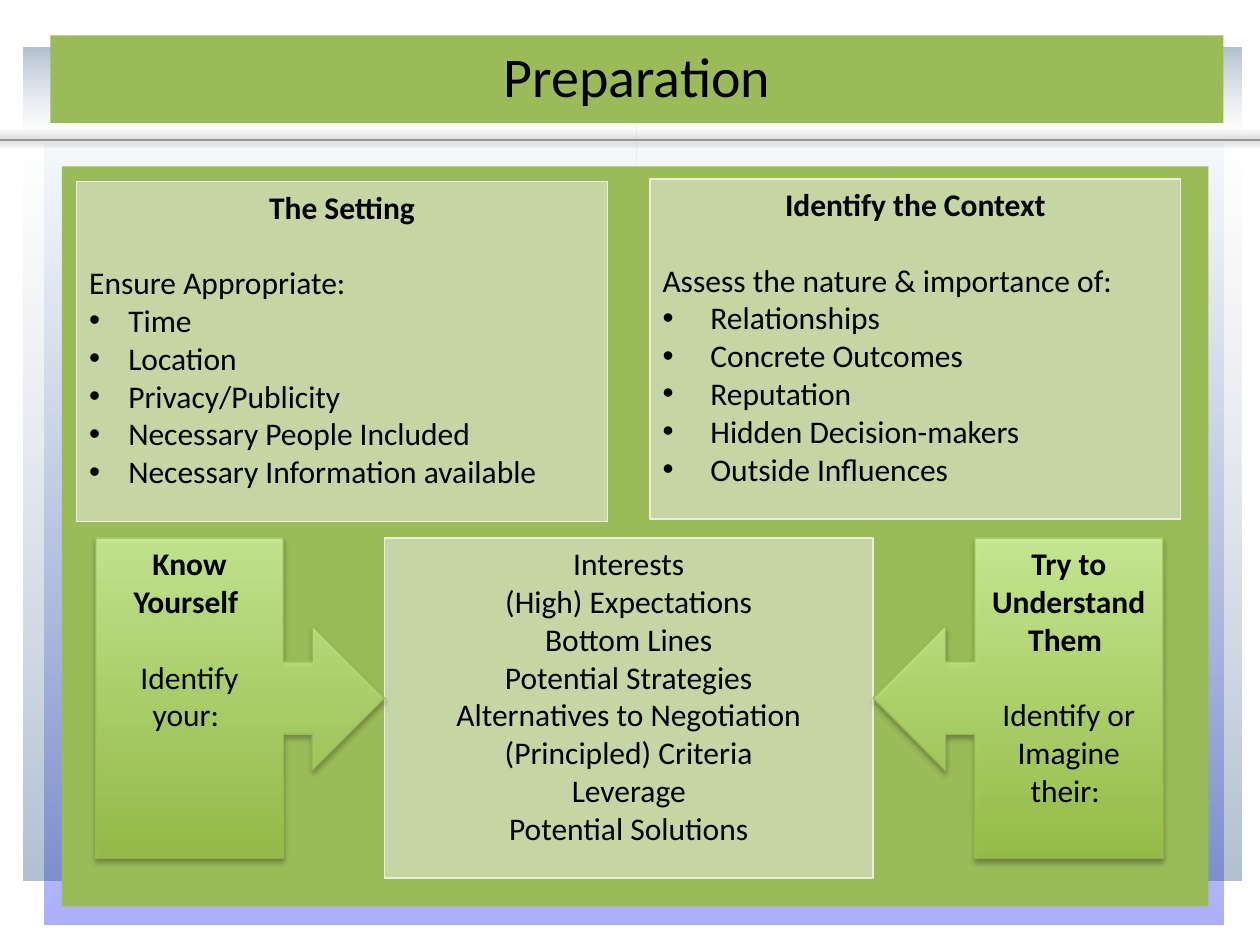
from collections import namedtuple

from lxml.etree import SubElement
from pptx import Presentation
from pptx.dml.color import RGBColor
from pptx.enum.shapes import MSO_CONNECTOR, MSO_SHAPE as Form
from pptx.enum.text import MSO_ANCHOR as Anchor, PP_ALIGN as Align
from pptx.oxml.ns import qn
from pptx.util import Emu, Pt

PX = 9144  # 100 px to the inch
FONT = "Calibri"
BLANK_LINE = 21.6  # points, one line of 18 pt text

BLACK = RGBColor(0x00, 0x00, 0x00)
GREEN = RGBColor(0x9B, 0xBB, 0x59)
LEAF = RGBColor(0xA0, 0xCA, 0x4A)
LIME = RGBColor(0xDA, 0xFF, 0xA5)
LEAF_EDGE = RGBColor(0x98, 0xB9, 0x55)
PALE = RGBColor(0xF2, 0xF2, 0xF2)
CREAM = RGBColor(0xEE, 0xEC, 0xE1)
GREY = RGBColor(0x96, 0x96, 0x96)
VIOLET = RGBColor(0x29, 0x32, 0xEF)
BLUE = RGBColor(0x4F, 0x81, 0xBD)
NAVY = RGBColor(0x1F, 0x49, 0x7D)
SLATE = RGBColor(0x7B, 0x86, 0x9F)

Box = namedtuple("Box", "left top width height")


def px(value):
    return Emu(value * PX)


def within(box, left, top, width, height):
    return Box(box.left + left, box.top + top, width, height)


def set_alpha(color_element, percent):
    SubElement(color_element, qn("a:alpha"), val=str(percent * 1000))


def add_shadow(effects, alpha, blur, distance, angle):
    shadow = SubElement(effects, qn("a:outerShdw"), blurRad=str(Pt(blur)),
                        dist=str(Pt(distance)), dir=str(angle * 60000),
                        algn="ctr", rotWithShape="0")
    set_alpha(SubElement(shadow, qn("a:srgbClr"), val=str(BLACK)), alpha)


def add_form(page, form, box, edge=None, adjust=(), rotation=0):
    shape = page.shapes.add_shape(form, *map(px, box))
    shape.shadow.inherit = False
    shape.rotation = rotation
    for index, value in enumerate(adjust):
        shape.adjustments[index] = value
    if edge is None:
        shape.line.fill.background()
    else:
        shape.line.color.rgb = edge
        shape.line.width = Pt(0.75)
    return shape


def fill_solid(shape, color, alpha=100):
    shape.fill.solid()
    shape.fill.fore_color.rgb = color
    if alpha < 100:
        fill = shape._element.spPr.find(qn("a:solidFill"))
        set_alpha(fill.find(qn("a:srgbClr")), alpha)


def fill_gradient(shape, stops, angle=90):
    """Fill from the first stop to the second; 90 runs upwards."""
    shape.fill.gradient()
    shape.fill.gradient_angle = angle
    for stop, (color, _) in zip(shape.fill.gradient_stops, stops):
        stop.color.rgb = color
    gradient = shape._element.spPr.find(qn("a:gradFill"))
    for element, (_, alpha) in zip(gradient.iter(qn("a:srgbClr")), stops):
        set_alpha(element, alpha)


def add_text(frame, text, size=18, bold=False, align=Align.LEFT,
             before=0, spacing=None, bullet_indent=None):
    para = frame.paragraphs[0]
    if para.runs:
        para = frame.add_paragraph()
    para.alignment = align
    para.space_before = Pt(before)
    if spacing:
        para.line_spacing = spacing
    if bullet_indent:
        props = para._p.get_or_add_pPr()
        props.set("marL", str(px(bullet_indent)))
        props.set("indent", str(-px(bullet_indent)))
        SubElement(props, qn("a:buFont"), typeface="Arial")
        SubElement(props, qn("a:buChar"), char="•")
    span = para.add_run()
    span.text = text
    span.font.name = FONT
    span.font.size = Pt(size)
    span.font.bold = bold
    span.font.color.rgb = BLACK


def top_frame(shape):
    frame = shape.text_frame
    frame.word_wrap = True
    frame.vertical_anchor = Anchor.TOP
    return frame


def add_backdrop(page, box):
    mist = ((NAVY, 35), (SLATE, 0))
    panels = (
        (within(box, 16, 76, 936, 620), ((VIOLET, 39), (BLUE, 5)), 90),
        (within(box, 0, 73, 966, 588), mist, 90),
        (within(box, 0, 0, 966, 67), mist, 270),
    )
    for panel, stops, angle in panels:
        shape = add_form(page, Form.ROUNDED_RECTANGLE, panel, adjust=[0])
        fill_gradient(shape, stops, angle)
    # Rule across the whole slide
    level = px(box.top + 73)
    rule = page.shapes.add_connector(
        MSO_CONNECTOR.STRAIGHT, px(box.left + 1004), level, px(box.left - 38), level)
    rule.line.color.rgb = GREY
    rule.line.width = Pt(1)
    effects = SubElement(rule._element.spPr, qn("a:effectLst"))
    add_shadow(effects, alpha=55, blur=5, distance=1, angle=270)


def add_title(page, box, text):
    banner = add_form(page, Form.UP_ARROW_CALLOUT, box,
                      adjust=(0, 0, 0.25, 0.65), rotation=180)
    fill_solid(banner, GREEN)
    label = page.shapes.add_textbox(*map(px, within(box, 0, 0, box.width, 70)))
    frame = label.text_frame
    frame.word_wrap = True
    frame.vertical_anchor = Anchor.MIDDLE
    frame.margin_left = frame.margin_right = px(17)
    frame.margin_top = frame.margin_bottom = px(17)
    add_text(frame, text, size=32, align=Align.CENTER, spacing=0.9)


def add_board(page, box):
    board = add_form(page, Form.UP_ARROW_CALLOUT, box,
                     adjust=(0, 0, 0.003, 0.997), rotation=180)
    fill_solid(board, GREEN)


def add_card(page, box):
    card = add_form(page, Form.RECTANGLE, box, edge=CREAM)
    fill_solid(card, PALE, alpha=49)
    return top_frame(card)


def add_checklist(page, box, heading, lead, items, indent):
    frame = add_card(page, box)
    add_text(frame, heading, bold=True, align=Align.CENTER)
    add_text(frame, lead, before=BLANK_LINE)
    for item in items:
        add_text(frame, item, bullet_indent=indent)


def add_topics(page, box, topics):
    frame = add_card(page, box)
    for topic in topics:
        add_text(frame, topic, align=Align.CENTER)


def add_callout(page, box, form, alpha, heading, prompt):
    callout = add_form(page, form, box, edge=LEAF_EDGE)
    fill_gradient(callout, ((LEAF, alpha), (LIME, alpha)))
    effects = callout._element.spPr.find(qn("a:effectLst"))
    add_shadow(effects, alpha=35, blur=3.1, distance=1.8, angle=90)
    frame = top_frame(callout)
    add_text(frame, heading, bold=True, align=Align.CENTER)
    add_text(frame, prompt, align=Align.CENTER, before=BLANK_LINE)


def main():
    deck = Presentation()
    deck.slide_width, deck.slide_height = px(1000), px(750)
    page = deck.slides.add_slide(deck.slide_layouts[6])

    add_backdrop(page, Box(19, 38, 966, 696))
    add_title(page, Box(40, 28, 931, 107), "Preparation")
    add_board(page, Box(49, 132, 910, 589))

    # Upper checklists
    add_checklist(page, Box(61, 144, 421, 270), "The Setting", "Ensure Appropriate:",
                  ("Time", "Location", "Privacy/Publicity", "Necessary People Included",
                   "Necessary Information available"), indent=31)
    add_checklist(page, Box(516, 142, 421, 270), "Identify the Context",
                  "Assess the nature & importance of:",
                  ("Relationships", "Concrete Outcomes", "Reputation",
                   "Hidden Decision-makers", "Outside Influences"), indent=38)

    # Shared topics, with a callout pointing in from each side
    add_topics(page, Box(305, 427, 388, 270),
               ("Interests", "(High) Expectations", "Bottom Lines", "Potential Strategies",
                "Alternatives to Negotiation", "(Principled) Criteria", "Leverage",
                "Potential Solutions"))
    add_callout(page, Box(76, 427, 229, 254), Form.RIGHT_ARROW_CALLOUT, 74,
                "Know Yourself ", "Identify your: ")
    add_callout(page, Box(693, 427, 230, 254), Form.LEFT_ARROW_CALLOUT, 79,
                "Try to Understand Them ", "Identify or Imagine their: ")

    deck.save("out.pptx")


if __name__ == "__main__":
    main()
